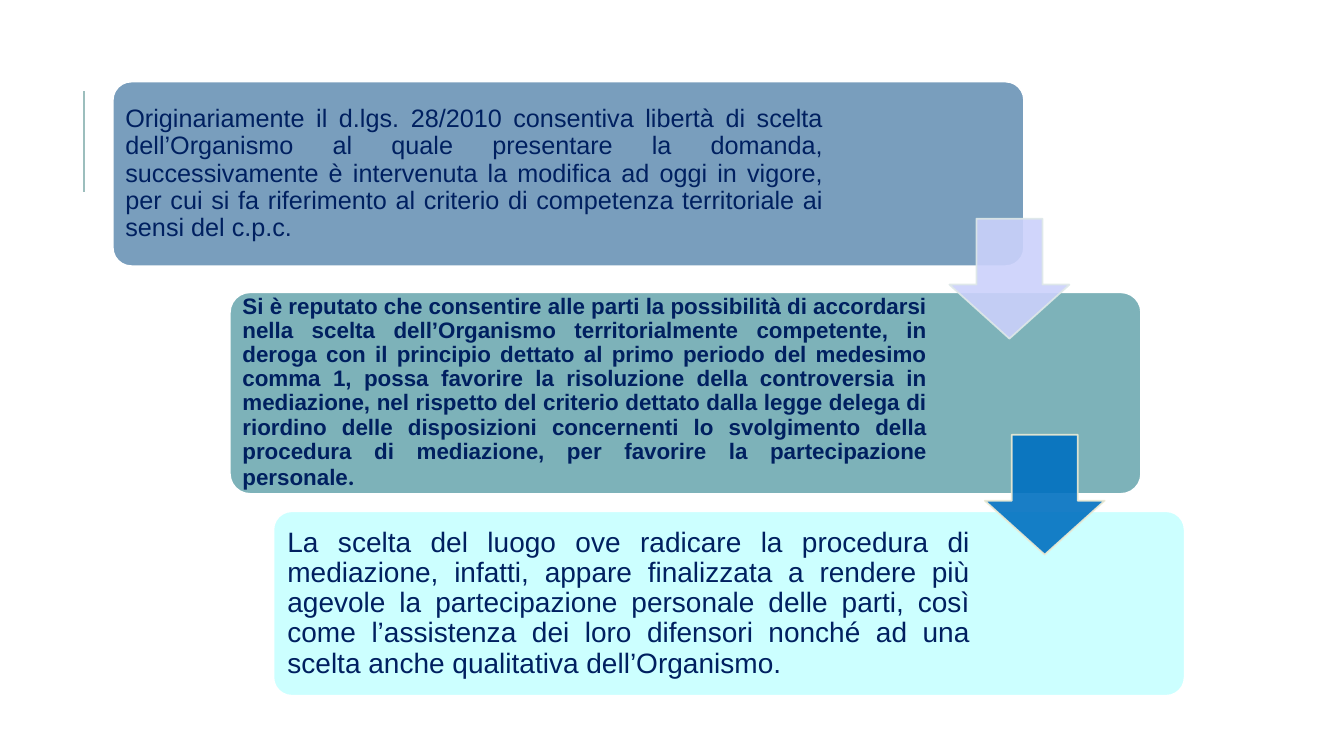
"""Build a slide with three cascading text panels joined by down arrows."""
from lxml.etree import SubElement
from pptx import Presentation
from pptx.dml.color import RGBColor
from pptx.enum.shapes import MSO_CONNECTOR, MSO_SHAPE
from pptx.enum.text import MSO_ANCHOR, PP_ALIGN
from pptx.oxml.ns import qn
from pptx.util import Pt

WHITE = RGBColor(0xFF, 0xFF, 0xFF)
NAVY = RGBColor(0x00, 0x20, 0x60)
STEEL = RGBColor(0x79, 0x9E, 0xBD)
TEAL = RGBColor(0x7D, 0xB2, 0xB9)
CYAN = RGBColor(0xCC, 0xFF, 0xFF)
LAVENDER = RGBColor(0xCB, 0xD1, 0xFB)
BLUE = RGBColor(0x00, 0x70, 0xC0)
PALE_GREY = RGBColor(0xDE, 0xE8, 0xE8)
CREAM = RGBColor(0xEE, 0xEC, 0xD4)
RULE_GREEN = RGBColor(0x9C, 0xBE, 0xBD)

PANEL_WIDTH = 650.9
ARROW_SIZE = 85.7
TEXT_OFFSET = 4

PANELS = [
    (80.6, 58.3, 131.8, STEEL, 508.3, 5, [
        ("Originariamente il d.lgs. 28/2010 consentiva libertà di scelta "
         "dell’Organismo al quale presentare la domanda, successivamente è "
         "intervenuta la modifica ad oggi in vigore, per cui si fa riferimento "
         "al criterio di competenza territoriale ai sensi del c.p.c.",
         18, "Arial", False)]),
    (164.2, 208.8, 144, TEAL, 499, 5, [
        ("Si è reputato che consentire alle parti la possibilità di accordarsi "
         "nella scelta dell’Organismo territorialmente competente, in deroga con "
         "il principio dettato al primo periodo del medesimo comma 1, possa "
         "favorire la risoluzione della controversia in mediazione, nel rispetto "
         "del criterio dettato dalla legge delega di riordino delle disposizioni "
         "concernenti lo svolgimento della procedura di mediazione, per favorire "
         "la partecipazione personale", 16, "Arial", True),
        (".", 18, "Calibri", True)]),
    (195.3, 365.2, 131.8, CYAN, 499.7, 6, [
        ("La scelta del luogo ove radicare la procedura di mediazione, infatti, "
         "appare finalizzata a rendere più agevole la partecipazione personale "
         "delle parti, così come l’assistenza dei loro difensori nonché ad una "
         "scelta anche qualitativa dell’Organismo.", 20, "Arial", False)]),
]
ARROWS = [
    (678.2, 156.2, LAVENDER, PALE_GREY),
    (703.4, 310.5, BLUE, CREAM),
]


def add_filled_shape(kind, left, top, width, height, fill, line):
    shape = slide.shapes.add_shape(kind, Pt(left), Pt(top), Pt(width), Pt(height))
    shape.shadow.inherit = False
    shape.fill.solid()
    shape.fill.fore_color.rgb = fill
    shape.line.color.rgb = line
    shape.line.width = Pt(1.25)
    return shape


presentation = Presentation()
presentation.slide_width = Pt(960)
presentation.slide_height = Pt(540)
slide = presentation.slides.add_slide(presentation.slide_layouts[6])

rule = slide.shapes.add_connector(
    MSO_CONNECTOR.STRAIGHT, Pt(60), Pt(137), Pt(60), Pt(65))
rule.line.color.rgb = RULE_GREEN
rule.line.width = Pt(1.5)
SubElement(rule.element.spPr, qn("a:effectLst"))

for left, top, height, fill, text_width, inset, runs in PANELS:
    panel = add_filled_shape(
        MSO_SHAPE.ROUNDED_RECTANGLE, left, top, PANEL_WIDTH, height, fill, WHITE)
    panel.adjustments[0] = 0.1

    text_box = slide.shapes.add_textbox(
        Pt(left + TEXT_OFFSET), Pt(top + TEXT_OFFSET),
        Pt(text_width), Pt(height - 2 * TEXT_OFFSET))
    frame = text_box.text_frame
    frame.word_wrap = True
    frame.vertical_anchor = MSO_ANCHOR.MIDDLE
    frame.margin_left = frame.margin_right = Pt(inset)
    frame.margin_top = frame.margin_bottom = Pt(inset)
    paragraph = frame.paragraphs[0]
    paragraph.alignment = PP_ALIGN.JUSTIFY
    paragraph.line_spacing = 0.9
    for text, size, font_name, bold in runs:
        run = paragraph.add_run()
        run.text = text
        run.font.size = Pt(size)
        run.font.name = font_name
        run.font.bold = bold
        run.font.color.rgb = NAVY

for left, top, fill, line in ARROWS:
    arrow = add_filled_shape(
        MSO_SHAPE.DOWN_ARROW, left, top, ARROW_SIZE, ARROW_SIZE, fill, line)
    arrow.adjustments[0] = 0.55
    arrow.adjustments[1] = 0.45
    for color in arrow.element.spPr.iter(qn("a:srgbClr")):
        SubElement(color, qn("a:alpha"), val="90000")

presentation.save("out.pptx")
